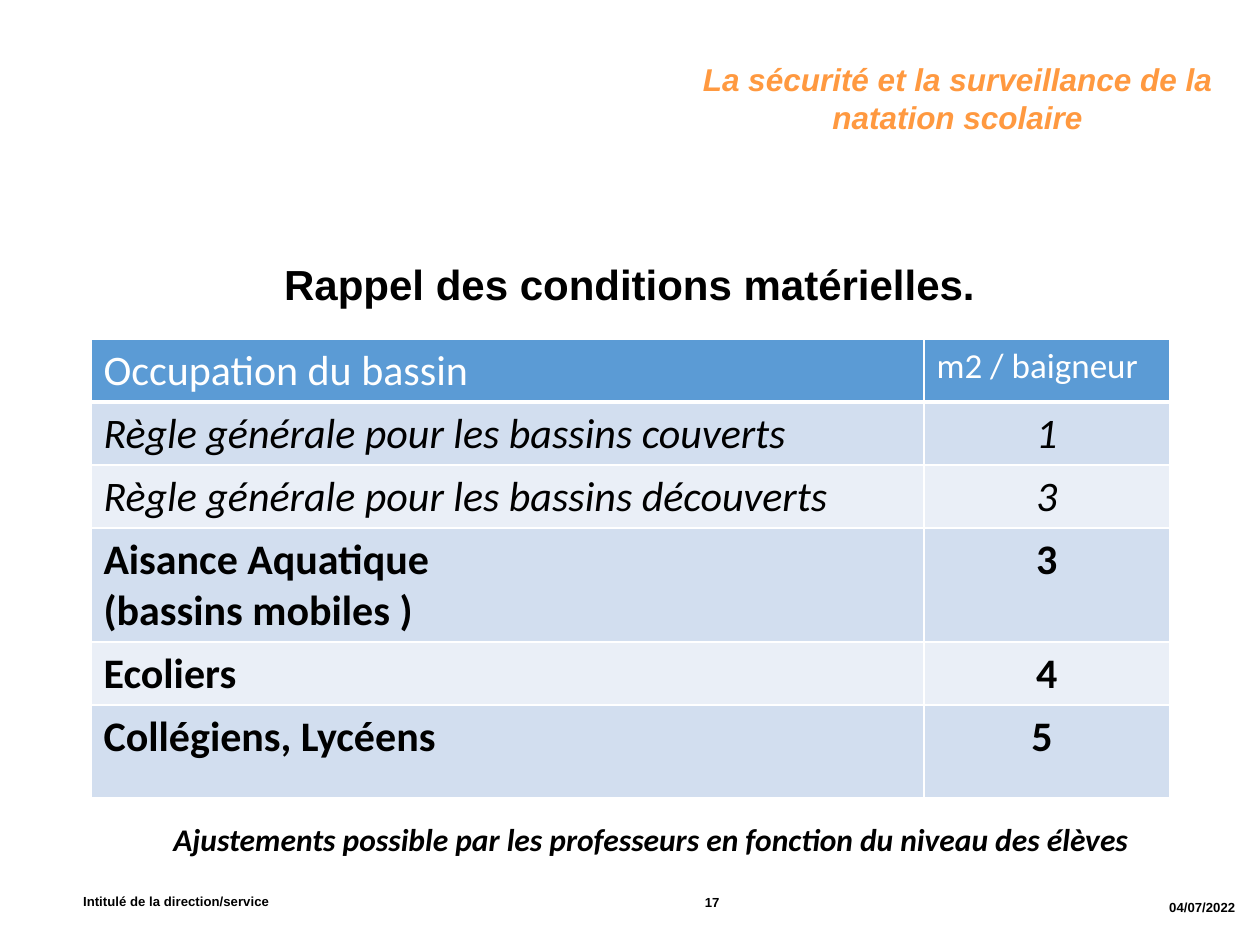
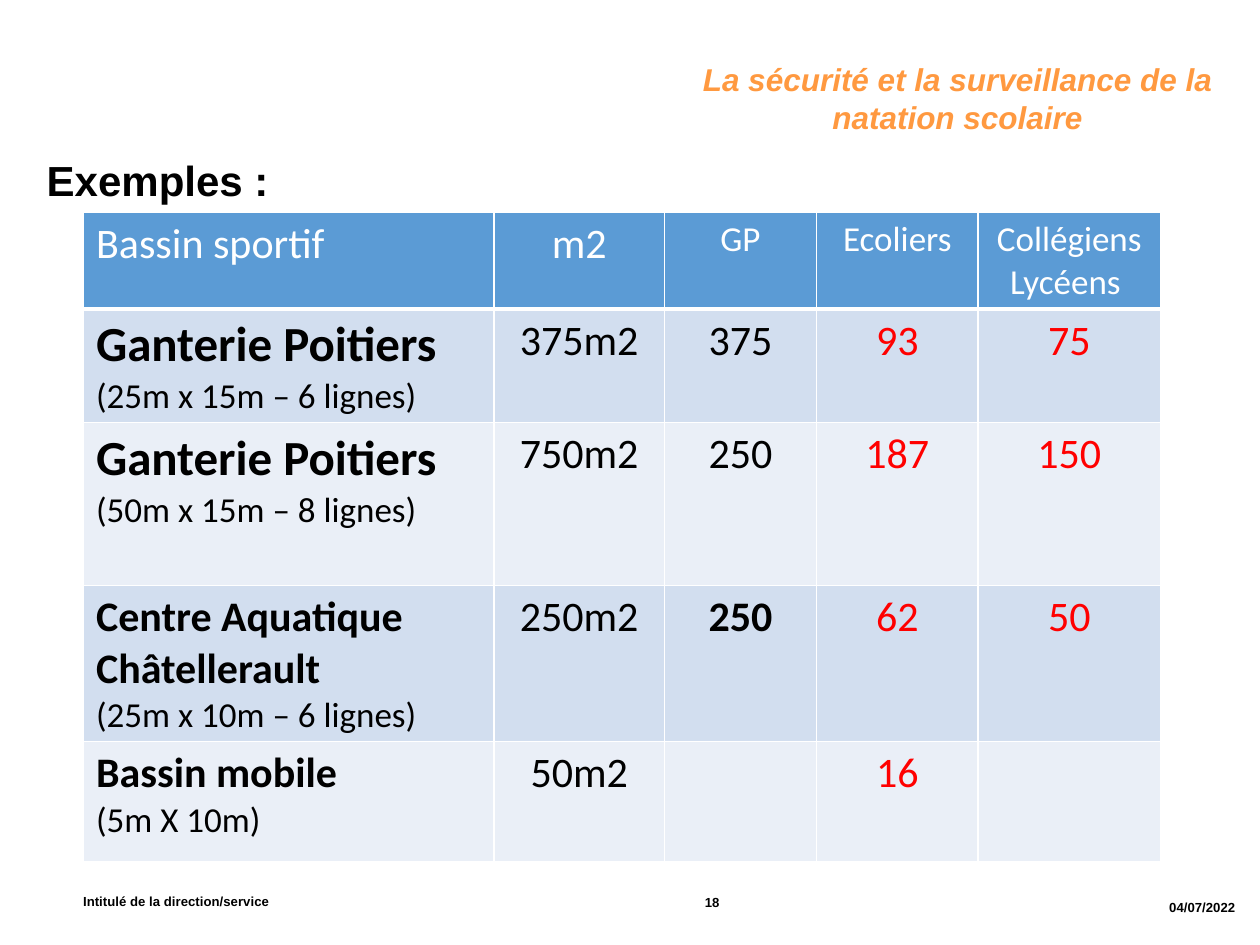
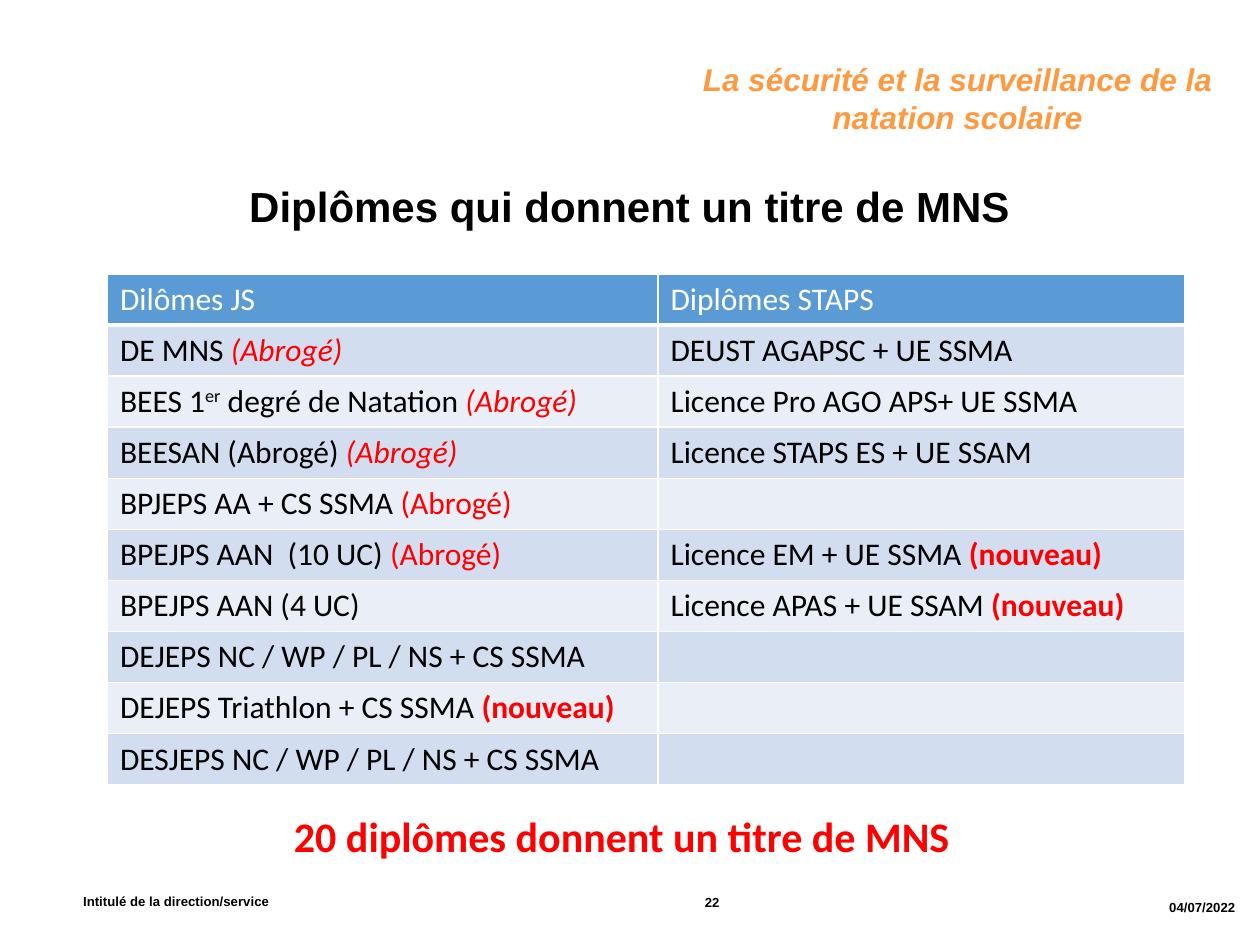
import pptx
import pptx.dml.color
import pptx.enum.text
import pptx.oxml
import pptx.oxml.ns
import pptx.util

Pt = pptx.util.Pt
Align = pptx.enum.text.PP_ALIGN
Anchor = pptx.enum.text.MSO_ANCHOR


class Theme:
    head, body = "Arial", "Calibri"
    black, white, red, orange = "000000", "FFFFFF", "FF0000", "FF9940"
    blue, bands = "5B9BD5", ("D2DEEF", "EAEFF7")
    tiny, small, note, large, huge = 7.5, 20, 18, 24, 28


MID = {"align": Align.CENTER}
RED = {"color": Theme.red}
BOLD = {"bold": True}
SLANT = {"italic": True}
SMALL = {"size": Theme.small}
HUGE = {"size": Theme.huge, **BOLD}
OLD = ("(Abrogé)", {**RED, **SLANT})
GONE = ("(Abrogé)", RED)
NEW = ("(nouveau)", {**RED, **BOLD})

THEME_LINE = "La sécurité et la surveillance de la natation scolaire"
OFFICE = "Intitulé de la direction/service"
DATE = "04/07/2022"


def pool(name, size, style=BOLD):
    return [[(name, style)], [(size, SMALL)]]


def both(style, *texts):
    return [[[(text, style)]] for text in texts]


SLIDES = [
    {
        "page": "17",
        "title": ("Rappel des conditions matérielles.", (19.5, 144, 680.5, 158), Align.CENTER),
        "place": (52, 193.7),
        "widths": (476, 140.4),
        "heights": (36, 36, 36, 65, 36, 53),
        "size": Theme.large,
        "heads": ({}, SMALL),
        "styles": ({}, MID),
        "rows": [
            ("Occupation du bassin", "m2 / baigneur"),
            both(SLANT, "Règle générale pour les bassins couverts", "1"),
            both(SLANT, "Règle générale pour les bassins découverts", "3"),
            ([[("Aisance Aquatique", BOLD)], [("(bassins mobiles )", BOLD)]], [[("3", BOLD)]]),
            both(BOLD, "Ecoliers", "4"),
            both(BOLD, "Collégiens, Lycéens", "5 "),
        ],
        "note": ("Ajustements possible par les professeurs en fonction du niveau des élèves",
                 (92, 465, 576, 29), {"size": Theme.note, **BOLD, **SLANT}),
    },
    {
        "page": "18",
        "title": ("Exemples :", (19.5, 84.5, 680.5, 158), Align.LEFT),
        "place": (47.7, 121.3),
        "widths": (234.7, 97.2, 87.1, 92.2, 104.4),
        "heights": (55, 65, 93.2, 89, 69),
        "size": Theme.large,
        "heads": ({}, MID, {**MID, **SMALL}, {**MID, **SMALL}, {**MID, **SMALL}),
        "styles": ({}, MID, MID, {**MID, **RED}, {**MID, **RED}),
        "rows": [
            ("Bassin sportif", "m2", "GP", "Ecoliers", ["Collégiens", "Lycéens "]),
            (pool("Ganterie Poitiers", "(25m x 15m – 6 lignes)", HUGE), "375m2", "375", "93", "75"),
            (pool("Ganterie Poitiers", "(50m x 15m – 8 lignes)", HUGE), "750m2", "250", "187", "150"),
            (pool("Centre Aquatique Châtellerault", "(25m x 10m – 6 lignes)"),
             "250m2", [[("250", BOLD)]], "62", "50"),
            (pool("Bassin mobile", "(5m X 10m)"), "50m2", "", "16", ""),
        ],
    },
    {
        "page": "22",
        "title": ("Diplômes qui donnent un titre de MNS", (19.5, 99.5, 680.5, 36), Align.CENTER),
        "place": (61.4, 156.5),
        "widths": (314.6, 301),
        "heights": (29.2,) * 10,
        "size": Theme.note,
        "heads": ({}, {}),
        "styles": ({}, {}),
        "rows": [
            ("Dilômes JS", "Diplômes STAPS"),
            ([["DE MNS ", OLD]], "DEUST AGAPSC + UE SSMA"),
            ([["BEES 1", ("er", {"base": 30}), " degré de Natation ", OLD]],
             "Licence Pro AGO APS+ UE SSMA"),
            ([["BEESAN (Abrogé) ", OLD]], "Licence STAPS ES + UE SSAM"),
            ([["BPJEPS AA + CS SSMA ", GONE]], ""),
            ([["BPEJPS AAN  (10 UC) ", GONE]], [["Licence EM + UE SSMA ", NEW]]),
            ("BPEJPS AAN (4 UC)", [["Licence APAS + UE SSAM ", NEW]]),
            ("DEJEPS NC / WP / PL / NS + CS SSMA", ""),
            ([["DEJEPS Triathlon + CS SSMA ", NEW]], ""),
            ("DESJEPS NC / WP / PL / NS + CS SSMA", ""),
        ],
        "note": ("20 diplômes donnent un titre de MNS", (47.5, 459.4, 615.6, 36),
                 {"size": Theme.large, **BOLD, **RED, **MID}),
    },
]


def rgb(code):
    return pptx.dml.color.RGBColor.from_string(code)


def style_run(run, size=Theme.note, face=Theme.body, color=Theme.black,
              bold=False, italic=False, base=0):
    font = run.font
    font.size, font.name = Pt(size), face
    font.bold, font.italic = bold, italic
    font.color.rgb = rgb(color)
    if base:
        run._r.get_or_add_rPr().set("baseline", str(base * 1000))


def write(frame, text, align=Align.LEFT, before=0, after=0, indent=0, **style):
    lines = [text] if isinstance(text, str) else text
    for i, line in enumerate(lines):
        para = frame.add_paragraph() if i else frame.paragraphs[0]
        para.alignment = align
        para.space_before, para.space_after = Pt(before), Pt(after)
        if indent:
            para._p.get_or_add_pPr().set("marL", str(Pt(indent)))
        for part in [line] if isinstance(line, str) else line:
            words, extra = (part, {}) if isinstance(part, str) else part
            run = para.add_run()
            run.text = words
            style_run(run, **{**style, **extra})


def add_text(slide, text, place, anchor=Anchor.TOP, inset=True, **style):
    frame = slide.shapes.add_textbox(*map(Pt, place)).text_frame
    frame.word_wrap = True
    frame.vertical_anchor = anchor
    if not inset:
        frame.margin_left = frame.margin_right = frame.margin_top = frame.margin_bottom = 0
    write(frame, text, **style)


def add_frame(slide, page):
    foot = {"size": Theme.tiny, "face": Theme.head, "anchor": Anchor.MIDDLE, **BOLD}
    add_text(slide, page, (326, 501, 162, 29), **foot, **MID)
    add_text(slide, DATE, (551, 504, 162, 29), align=Align.RIGHT, **foot)
    add_text(slide, OFFICE, (47.5, 501, 465, 28), inset=False, **foot)
    add_text(slide, THEME_LINE, (360, 31, 360, 51), before=6, after=8, indent=14.4,
             size=Theme.note, face=Theme.head, color=Theme.orange, **BOLD, **SLANT, **MID)


def add_title(slide, text, place, align):
    title = slide.shapes.title
    title.left, title.top, title.width, title.height = map(Pt, place)
    frame = title.text_frame
    frame.word_wrap = True
    frame.auto_size = pptx.enum.text.MSO_AUTO_SIZE.NONE
    frame.vertical_anchor = Anchor.TOP
    write(frame, text, align=align, size=Theme.large, face=Theme.head, **BOLD)


def paint(cell, color, low):
    props = cell._tc.get_or_add_tcPr()
    space = pptx.oxml.ns.nsdecls("a")
    for side, width in (("L", 1), ("R", 1), ("T", 1), ("B", low)):
        props.append(pptx.oxml.parse_xml(
            f'<a:ln{side} {space} w="{Pt(width)}"><a:solidFill>'
            f'<a:srgbClr val="{Theme.white}"/></a:solidFill></a:ln{side}>'))
    cell.fill.solid()
    cell.fill.fore_color.rgb = rgb(color)


def add_grid(slide, data):
    rows, widths, heights = data["rows"], data["widths"], data["heights"]
    table = slide.shapes.add_table(len(rows), len(widths), *map(Pt, data["place"]),
                                   Pt(sum(widths)), Pt(sum(heights))).table
    table.horz_banding = False
    for col, width in zip(table.columns, widths):
        col.width = Pt(width)
    for r, row in enumerate(rows):
        table.rows[r].height = Pt(heights[r])
        styles = data["styles"] if r else data["heads"]
        ink = Theme.black if r else Theme.white
        for c, text in enumerate(row):
            cell = table.cell(r, c)
            paint(cell, Theme.bands[(r - 1) % 2] if r else Theme.blue, 1 if r else 3)
            if text:
                write(cell.text_frame, text,
                      **{"size": data["size"], "color": ink, **styles[c]})


def main():
    deck = pptx.Presentation()
    deck.slide_width, deck.slide_height = Pt(720), Pt(540)
    for data in SLIDES:
        slide = deck.slides.add_slide(deck.slide_layouts[5])
        add_title(slide, *data["title"])
        add_frame(slide, data["page"])
        add_grid(slide, data)
        if "note" in data:
            text, place, style = data["note"]
            add_text(slide, text, place, **style)
    deck.save("out.pptx")


if __name__ == "__main__":
    main()
